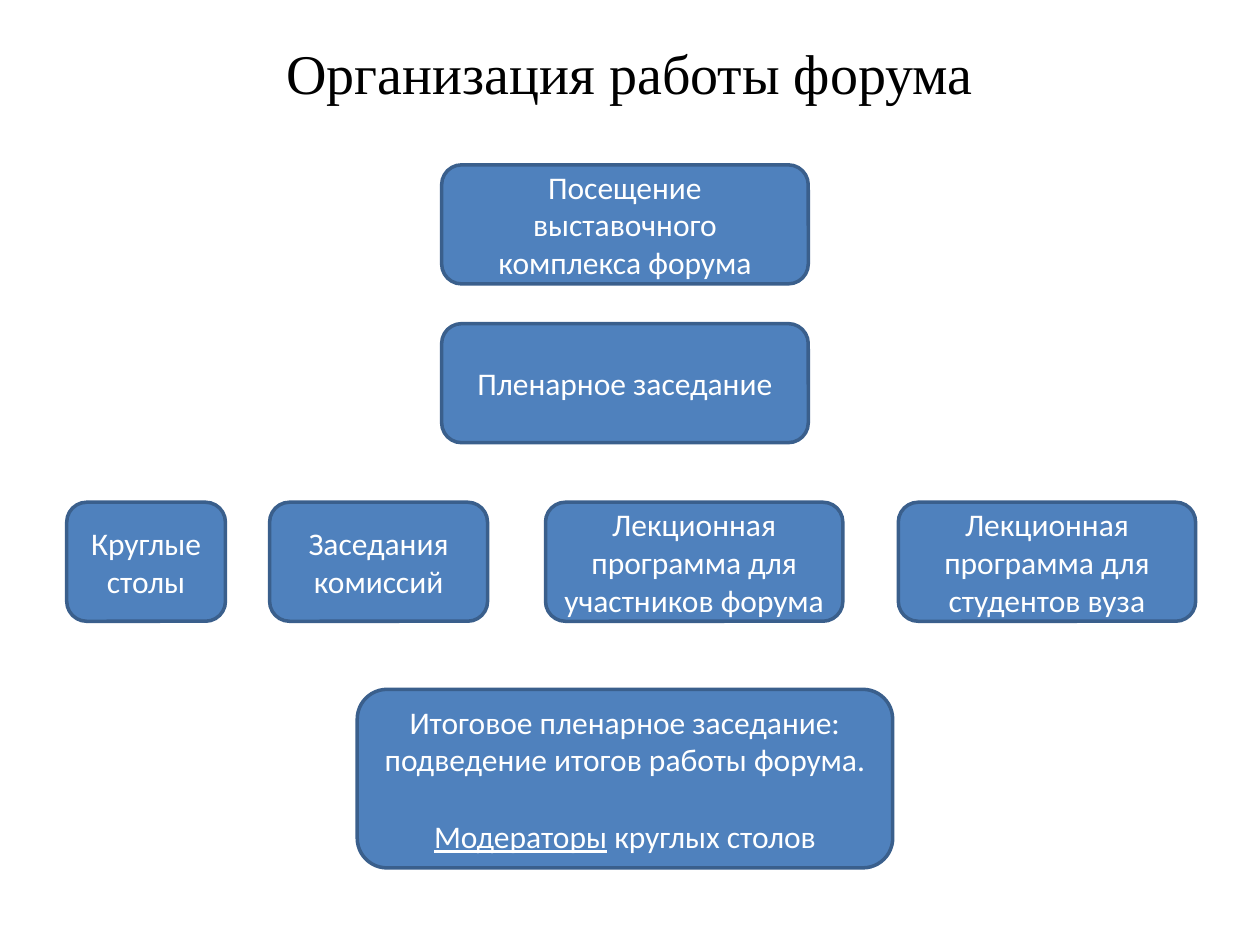
from pptx import Presentation
from pptx.dml.color import RGBColor
from pptx.enum.shapes import MSO_SHAPE as Shape
from pptx.enum.text import MSO_ANCHOR as Anchor, PP_ALIGN as Align
from pptx.util import Inches, Pt

BLACK = RGBColor(0x00, 0x00, 0x00)
WHITE = RGBColor(0xFF, 0xFF, 0xFF)
BLUE = RGBColor(0x4F, 0x81, 0xBD)
EDGE = RGBColor(0x3A, 0x5F, 0x8C)

deck = Presentation()
deck.slide_width, deck.slide_height = Inches(10), Inches(7.5)
COL, ROW = deck.slide_width / 100, deck.slide_height / 100
slide = deck.slides.add_slide(deck.slide_layouts[5])


def place(shape, left, top, width, height):
    """Set the frame in hundredths of the slide's width and height."""
    shape.left, shape.width = int(left * COL), int(width * COL)
    shape.top, shape.height = int(top * ROW), int(height * ROW)


def add_run(para, text, font, size, color):
    para.alignment = Align.CENTER
    run = para.add_run()
    run.text = text
    run.font.name, run.font.size = font, Pt(size)
    run.font.color.rgb = color
    return run


title = slide.shapes.title
place(title, 5, 4, 90, 7.2)
title.text_frame.vertical_anchor = Anchor.MIDDLE
add_run(title.text_frame.paragraphs[0], "Организация работы форума",
        "Times New Roman", 32, BLACK)

# Each stage of the forum: top, height, then its boxes as left, width, text
TALL = 12.6
stages = [
    (17.45, TALL, [(35.05, 29.1, "Посещение выставочного комплекса форума")]),
    (34.25, TALL, [(35.05, 29.1, "Пленарное заседание")]),
    (53.15, TALL, [
        (5.3, 12.6, "Круглые столы"),
        (21.4, 17.3, "Заседания комиссий"),
        (43.3, 23.6, "Лекционная программа для участников форума"),
        (71.3, 23.6, "Лекционная программа для студентов вуза"),
    ]),
    (72.95, TALL * 1.5, [(28.35, 42.5, "Итоговое пленарное заседание: "
                          "подведение итогов работы форума.")]),
]

for top, height, boxes in stages:
    for left, width, text in boxes:
        box = slide.shapes.add_shape(Shape.ROUNDED_RECTANGLE, 0, 0, 0, 0)
        place(box, left, top, width, height)
        box.shadow.inherit = False
        box.fill.solid()
        box.fill.fore_color.rgb = BLUE
        box.line.color.rgb = EDGE
        box.line.width = Pt(2)
        frame = box.text_frame
        frame.word_wrap = True
        frame.vertical_anchor = Anchor.MIDDLE
        add_run(frame.paragraphs[0], text, "Calibri", 18, WHITE)

# The last box also names the speakers, one line lower
para = frame.add_paragraph()
para.space_before = Pt(22)
add_run(para, "Модераторы", "Calibri", 18, WHITE).font.underline = True
add_run(para, " круглых столов", "Calibri", 18, WHITE)

deck.save("out.pptx")
